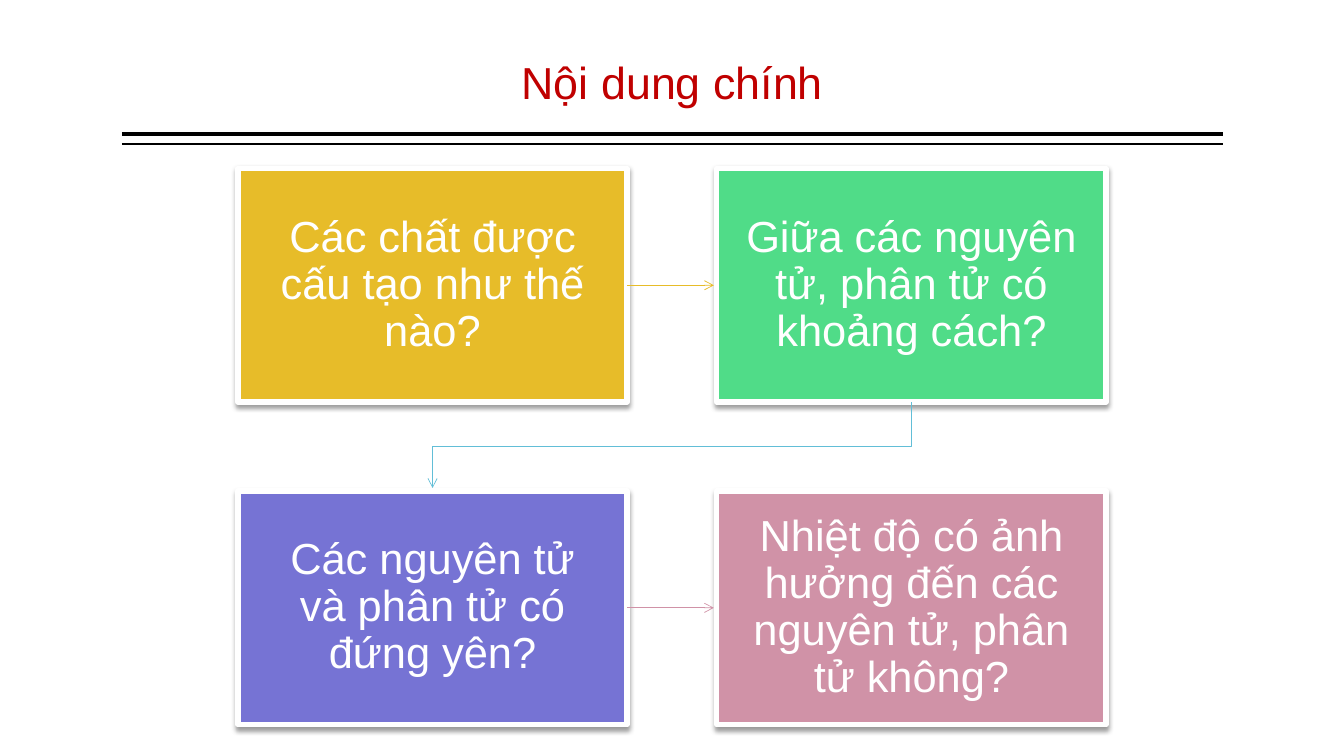
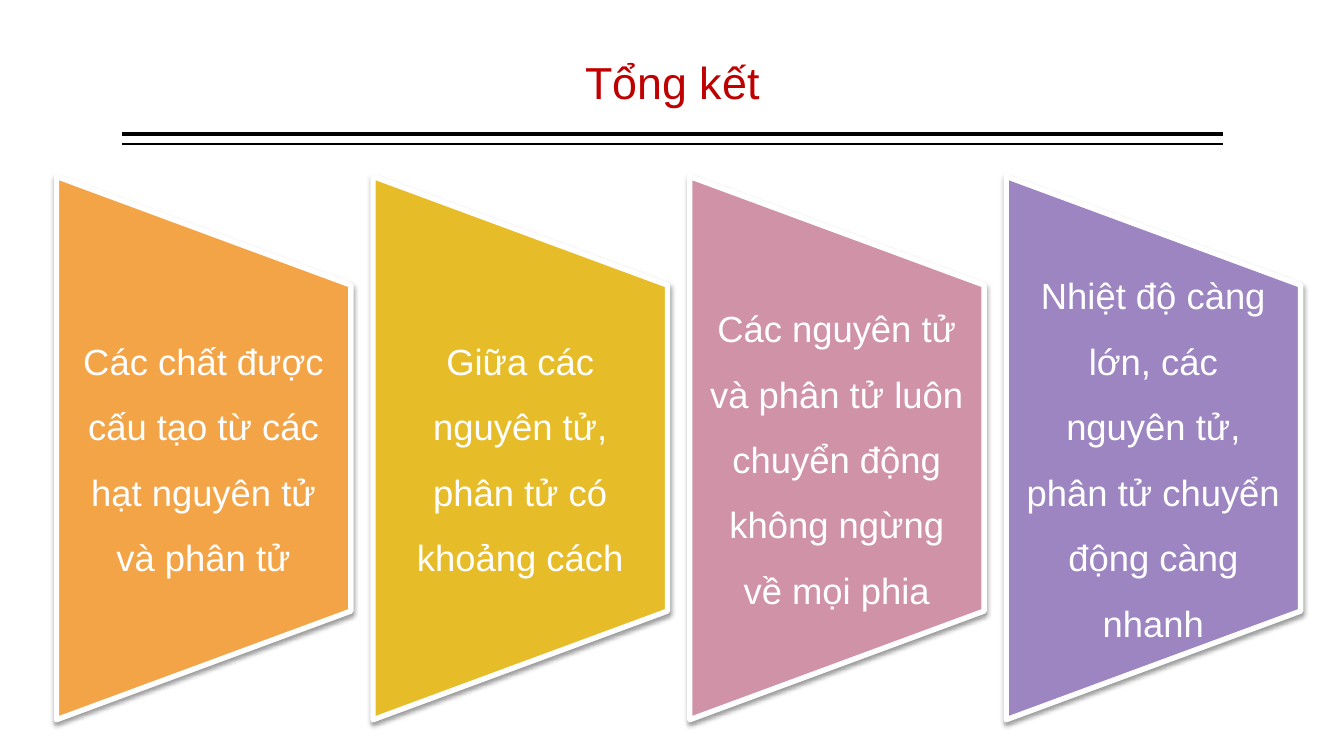
from dataclasses import dataclass

from lxml.etree import SubElement
from pptx import Presentation
from pptx.dml.color import RGBColor
from pptx.enum.shapes import MSO_CONNECTOR as Connector, MSO_SHAPE as Preset
from pptx.enum.text import MSO_ANCHOR as Anchor, MSO_AUTO_SIZE as AutoSize, PP_ALIGN as Align
from pptx.oxml.ns import qn
from pptx.util import Inches, Pt

FONT = "Arial"
COLORS = {
    "title": "C00000",
    "rule": "000000",
    "white": "FFFFFF",
    "gold": "E7BC29",
    "green": "50DC88",
    "indigo": "7673D4",
    "rose": "D092A7",
    "orange": "F3A447",
    "purple": "9C85C0",
    "cyan": "62BED7",
}


@dataclass(frozen=True)
class Area:
    left: float
    top: float
    width: float
    height: float

    @property
    def right(self) -> float:
        return self.left + self.width

    @property
    def bottom(self) -> float:
        return self.top + self.height

    @property
    def center(self) -> tuple[float, float]:
        return self.left + self.width / 2, self.top + self.height / 2

    def inches(self) -> tuple:
        return tuple(map(Inches, (self.left, self.top, self.width, self.height)))


@dataclass(frozen=True)
class Grid:
    first: Area
    column_step: float
    row_step: float = 0

    def cell(self, column: int, row: int = 0) -> Area:
        return Area(self.first.left + column * self.column_step,
                    self.first.top + row * self.row_step,
                    self.first.width, self.first.height)


@dataclass(frozen=True)
class Card:
    text: str
    color: str


@dataclass(frozen=True)
class Rule:
    top: float
    weight: float


TITLE = Area(1.21, 0.08, 10.92, 1.2)
RULES = [Rule(1.33, 3), Rule(1.43, 1)]
QUESTION_GRID = Grid(Area(2.36, 1.67, 3.86, 2.32), 4.75, 3.2)
SUMMARY_GRID = Grid(Area(0.56, 1.75, 2.92, 5.39), 3.14)
ARROW_GAP = 0.03

QUESTIONS = [
    Card("Các chất được cấu tạo như thế nào?", "gold"),
    Card("Giữa các nguyên tử, phân tử có khoảng cách?", "green"),
    Card("Các nguyên tử và phân tử có đứng yên?", "indigo"),
    Card("Nhiệt độ có ảnh hưởng đến các nguyên tử, phân tử không?", "rose"),
]
SUMMARIES = [
    Card("Các chất được cấu tạo từ các hạt nguyên tử và phân tử", "orange"),
    Card("Giữa các nguyên tử, phân tử có khoảng cách", "gold"),
    Card("Các nguyên tử và phân tử luôn chuyển động không ngừng về mọi phia", "rose"),
    Card("Nhiệt độ càng lớn, các nguyên tử, phân tử chuyển động càng nhanh", "purple"),
]


def rgb(name: str) -> RGBColor:
    return RGBColor.from_string(COLORS[name])


def write(box, text: str, *, size: float, color: str = "white", spacing: float = 1,
          inset_x: float = 0, inset_y: float = 0) -> None:
    frame = box.text_frame
    frame.word_wrap = True
    frame.auto_size = AutoSize.NONE
    frame.vertical_anchor = Anchor.MIDDLE
    frame.margin_left = frame.margin_right = Inches(inset_x)
    frame.margin_top = frame.margin_bottom = Inches(inset_y)
    para = frame.paragraphs[0]
    para.alignment = Align.CENTER
    para.line_spacing = spacing
    span = para.add_run()
    span.text = text
    span.font.name = FONT
    span.font.size = Pt(size)
    span.font.color.rgb = rgb(color)


def style_line(shape, color: str, weight: float, arrow: bool = False) -> None:
    shape.line.color.rgb = rgb(color)
    shape.line.width = Pt(weight)
    if arrow:
        SubElement(shape.line._get_or_add_ln(), qn("a:tailEnd"), type="arrow")


def add_line(page, start: tuple[float, float], end: tuple[float, float],
             color: str, weight: float, arrow: bool = False) -> None:
    line = page.shapes.add_connector(Connector.STRAIGHT, *map(Inches, start + end))
    style_line(line, color, weight, arrow)
    SubElement(line._element.spPr, qn("a:effectLst"))


def add_bent_arrow(page, points: list[tuple[float, float]], color: str) -> None:
    start, *others = [(Inches(x), Inches(y)) for x, y in points]
    builder = page.shapes.build_freeform(*start)
    builder.add_line_segments(others, close=False)
    arrow = builder.convert_to_shape()
    arrow.fill.background()
    arrow.shadow.inherit = False
    style_line(arrow, color, 0.5, arrow=True)


def add_panel(page, preset: Preset, area: Area, color: str):
    panel = page.shapes.add_shape(preset, *area.inches())
    panel.fill.solid()
    panel.fill.fore_color.rgb = rgb(color)
    style_line(panel, "white", 3.82)
    panel.shadow.inherit = False
    effects = panel._element.spPr.find(qn("a:effectLst"))
    shadow = SubElement(effects, qn("a:outerShdw"), blurRad=str(Pt(3.5)), dist=str(Pt(2)),
                        dir="5400000", rotWithShape="0")
    shade = SubElement(shadow, qn("a:srgbClr"), val=COLORS["rule"])
    SubElement(shade, qn("a:alpha"), val="38000")
    return panel


def add_page(deck, title: str):
    page = deck.slides.add_slide(deck.slide_layouts[5])
    for rule in RULES:
        add_line(page, (TITLE.left, rule.top), (TITLE.right, rule.top), "rule", rule.weight)
    heading = page.shapes.title
    heading.left, heading.top, heading.width, heading.height = TITLE.inches()
    write(heading, title, size=32, color="title", spacing=1.5, inset_y=0.05)
    return page


def add_questions(deck) -> None:
    page = add_page(deck, "Nội dung chính")
    cells = [QUESTION_GRID.cell(index % 2, index // 2) for index in range(len(QUESTIONS))]
    for card, cell in zip(QUESTIONS, cells):
        panel = add_panel(page, Preset.RECTANGLE, cell, card.color)
        write(panel, card.text, size=31, spacing=0.9, inset_x=0.24, inset_y=0.24)
    for source, target, color in ((cells[0], cells[1], "gold"), (cells[2], cells[3], "rose")):
        middle = source.center[1]
        add_line(page, (source.right, middle), (target.left - ARROW_GAP, middle),
                 color, 0.5, arrow=True)
    source, target = cells[1], cells[2]
    bend = (source.bottom + target.top) / 2
    start_x, end_x = source.center[0], target.center[0]
    add_bent_arrow(page, [(start_x, source.bottom), (start_x, bend), (end_x, bend),
                          (end_x, target.top - ARROW_GAP)], "cyan")


def add_summary(deck) -> None:
    page = add_page(deck, "Tổng kết")
    for column, card in enumerate(SUMMARIES):
        cell = SUMMARY_GRID.cell(column)
        center_x, center_y = cell.center
        turned = Area(center_x - cell.height / 2, center_y - cell.width / 2,
                      cell.height, cell.width)
        panel = add_panel(page, Preset.FLOWCHART_MANUAL_OPERATION, turned, card.color)
        panel.rotation = 270
        text_height = cell.height * 0.6
        text_area = Area(cell.left, center_y - text_height / 2, cell.width, text_height)
        box = page.shapes.add_textbox(*text_area.inches())
        write(box, card.text, size=26, spacing=1.5, inset_x=0.18)


def main() -> None:
    deck = Presentation()
    deck.slide_width, deck.slide_height = Inches(13.33), Inches(7.5)
    add_questions(deck)
    add_summary(deck)
    deck.save("out.pptx")


if __name__ == "__main__":
    main()
